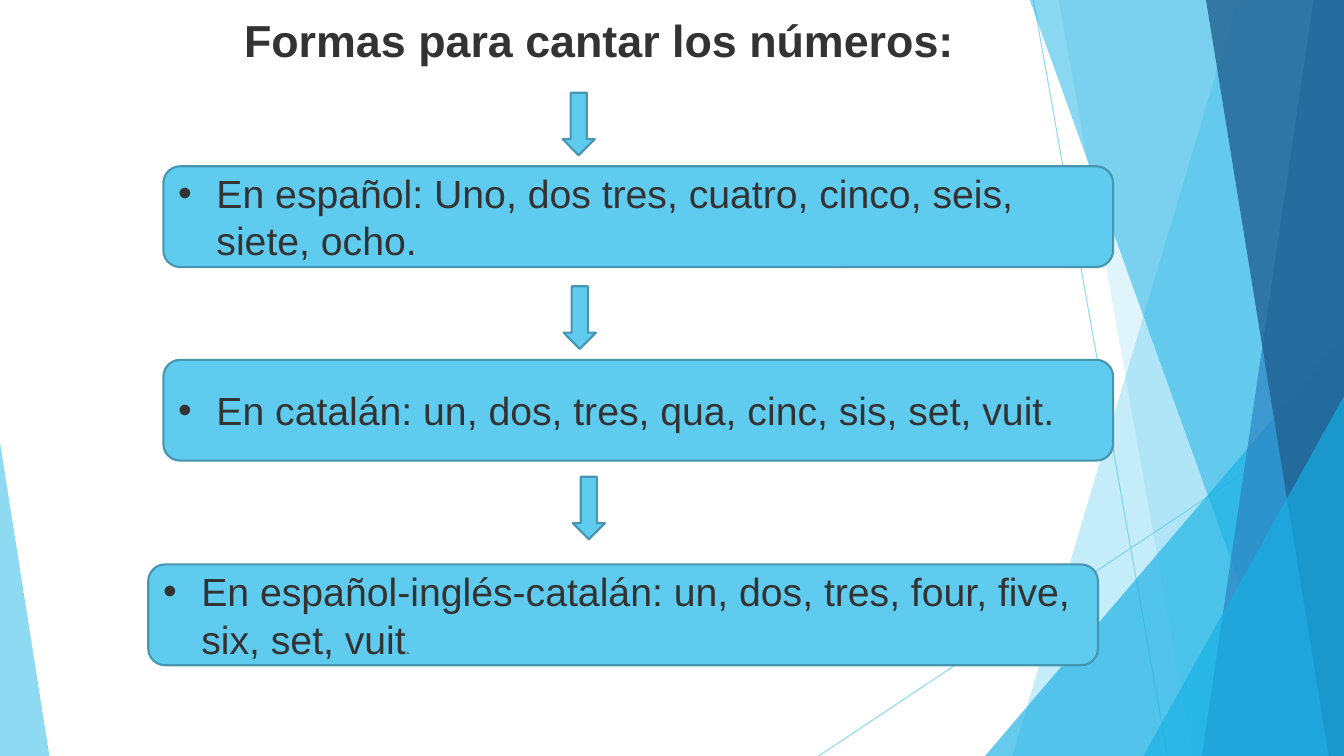
from lxml.etree import SubElement
from pptx import Presentation
from pptx.dml.color import RGBColor
from pptx.enum.shapes import MSO_CONNECTOR, MSO_SHAPE
from pptx.enum.text import MSO_ANCHOR, MSO_AUTO_SIZE, PP_ALIGN
from pptx.oxml.ns import qn
from pptx.util import Inches, Pt

SKY = RGBColor(0x5F, 0xCB, 0xEF)
CYAN = RGBColor(0x17, 0xB0, 0xE4)
BLUE = RGBColor(0x2E, 0x83, 0xC3)
NAVY = RGBColor(0x22, 0x62, 0x92)
EDGE = RGBColor(0x46, 0x96, 0xB1)
TEXT = RGBColor(0x33, 0x33, 0x33)
FONT = "Arial"
WIDTH, HEIGHT = 13.33, 7.5

RAYS = [((10.25, 0), (11.58, HEIGHT)), ((WIDTH, 4.03), (8.12, HEIGHT))]
BACK_BANDS = [(12.28, 10.04, SKY, 36), (10.5, 11.83, SKY, 20)]
FRONT_BANDS = [(10.21, 12.91, CYAN, 50), (13.03, 11.92, BLUE, 70), (11.96, 13.18, NAVY, 80)]

STEPS = [
    (1.62, 1.65, [("En español: Uno, dos tres, cuatro, cinco, seis, siete, ocho.", 28)]),
    (1.62, 3.57, [("En catalán: un, dos, tres, qua, cinc, sis, set, vuit.", 28)]),
    (1.47, 5.6, [("En español-inglés-catalán: un, dos, tres, four, five, six, set, vuit", 28),
                 (".", 10.5)]),
]
ARROWS = [(5.58, 0.92), (5.59, 2.84), (5.68, 4.73)]


def set_alpha(parent, percent):
    """Make the solid colour inside parent partly transparent."""
    color = next(parent.iter(qn("a:srgbClr")))
    SubElement(color, qn("a:alpha")).set("val", str(percent * 1000))


def paint(sp, color, alpha=None, edge=None):
    """Give a shape its flat fill and optional outline."""
    sp.shadow.inherit = False
    sp.fill.solid()
    sp.fill.fore_color.rgb = color
    if alpha:
        set_alpha(sp.fill._xPr, alpha)
    if edge:
        sp.line.color.rgb = edge
        sp.line.width = Pt(1.5)
    else:
        sp.line.fill.background()


def add_ray(s, start, end):
    """Draw one thin decorative line."""
    cn = s.shapes.add_connector(MSO_CONNECTOR.STRAIGHT, *map(Inches, start + end))
    cn.line.color.rgb = SKY
    cn.line.width = Pt(0.75)
    sppr = cn._element.spPr
    set_alpha(sppr, 70)
    SubElement(sppr, qn("a:effectLst"))


def add_band(s, top_x, bottom_x, color, alpha):
    """Draw a slanted band that reaches the right edge of the slide."""
    points = [(top_x, -0.01), (WIDTH, -0.01), (WIDTH, HEIGHT), (bottom_x, HEIGHT)]
    points = [(Inches(x), Inches(y)) for x, y in points]
    fb = s.shapes.build_freeform(*points[0])
    fb.add_line_segments(points[1:], close=True)
    paint(fb.convert_to_shape(), color, alpha)


def add_corner(s, x, y, w, apex, color, alpha):
    """Draw a triangle standing on the bottom edge of the slide."""
    box = map(Inches, (x, y, w, HEIGHT - y))
    sp = s.shapes.add_shape(MSO_SHAPE.ISOSCELES_TRIANGLE, *box)
    sp.adjustments[0] = apex
    paint(sp, color, alpha)


def add_backdrop(s):
    """Draw the overlapping facets on both sides."""
    for start, end in RAYS:
        add_ray(s, start, end)
    for band in BACK_BANDS:
        add_band(s, *band)
    add_corner(s, 9.77, 3.33, 3.56, 1, CYAN, 66)
    for band in FRONT_BANDS:
        add_band(s, *band)
    add_corner(s, 11.34, 3.93, 1.99, 1, CYAN, 66)
    add_corner(s, 0, 4.39, 0.49, 0, SKY, 70)


def add_run(p, text, size, bold=False):
    """Append one formatted run."""
    r = p.add_run()
    r.text = text
    r.font.name = FONT
    r.font.size = Pt(size)
    r.font.bold = bold
    r.font.color.rgb = TEXT


def add_title(s, x, y, w, h):
    """Place and format the title placeholder."""
    sp = s.shapes.title
    sp.left, sp.top, sp.width, sp.height = map(Inches, (x, y, w, h))
    tf = sp.text_frame
    tf.word_wrap = True
    tf.auto_size = MSO_AUTO_SIZE.NONE
    tf.vertical_anchor = MSO_ANCHOR.TOP
    p = tf.paragraphs[0]
    p.alignment = PP_ALIGN.LEFT
    p.space_after = Pt(8)
    add_run(p, "Formas para cantar los números:", 32, True)


def add_step(s, x, y, w, h, runs):
    """Draw a rounded box holding one bulleted way of counting."""
    sp = s.shapes.add_shape(MSO_SHAPE.ROUNDED_RECTANGLE, *map(Inches, (x, y, w, h)))
    paint(sp, SKY, edge=EDGE)
    tf = sp.text_frame
    tf.word_wrap = True
    tf.vertical_anchor = MSO_ANCHOR.MIDDLE
    p = tf.paragraphs[0]
    p.alignment = PP_ALIGN.LEFT
    p.space_after = Pt(8)
    ppr = p._p.get_or_add_pPr()
    ppr.set("marL", str(Inches(0.38)))
    ppr.set("indent", str(Inches(-0.38)))
    SubElement(ppr, qn("a:buFont")).set("typeface", FONT)
    SubElement(ppr, qn("a:buChar")).set("char", "•")
    for text, size in runs:
        add_run(p, text, size)


def add_arrow(s, x, y, w, h):
    """Draw a block arrow pointing down to the next box."""
    sp = s.shapes.add_shape(MSO_SHAPE.DOWN_ARROW, *map(Inches, (x, y, w, h)))
    paint(sp, SKY, edge=EDGE)


def main():
    """Build the slide and save it."""
    prs = Presentation()
    prs.slide_width, prs.slide_height = Inches(WIDTH), Inches(HEIGHT)
    s = prs.slides.add_slide(prs.slide_layouts[5])
    add_backdrop(s)
    add_title(s, 2.32, 0.08, 8.72, 0.64)
    for x, y, runs in STEPS:
        add_step(s, x, y, 9.42, 1, runs)
    for x, y in ARROWS:
        add_arrow(s, x, y, 0.32, 0.62)
    prs.save("out.pptx")


if __name__ == "__main__":
    main()
